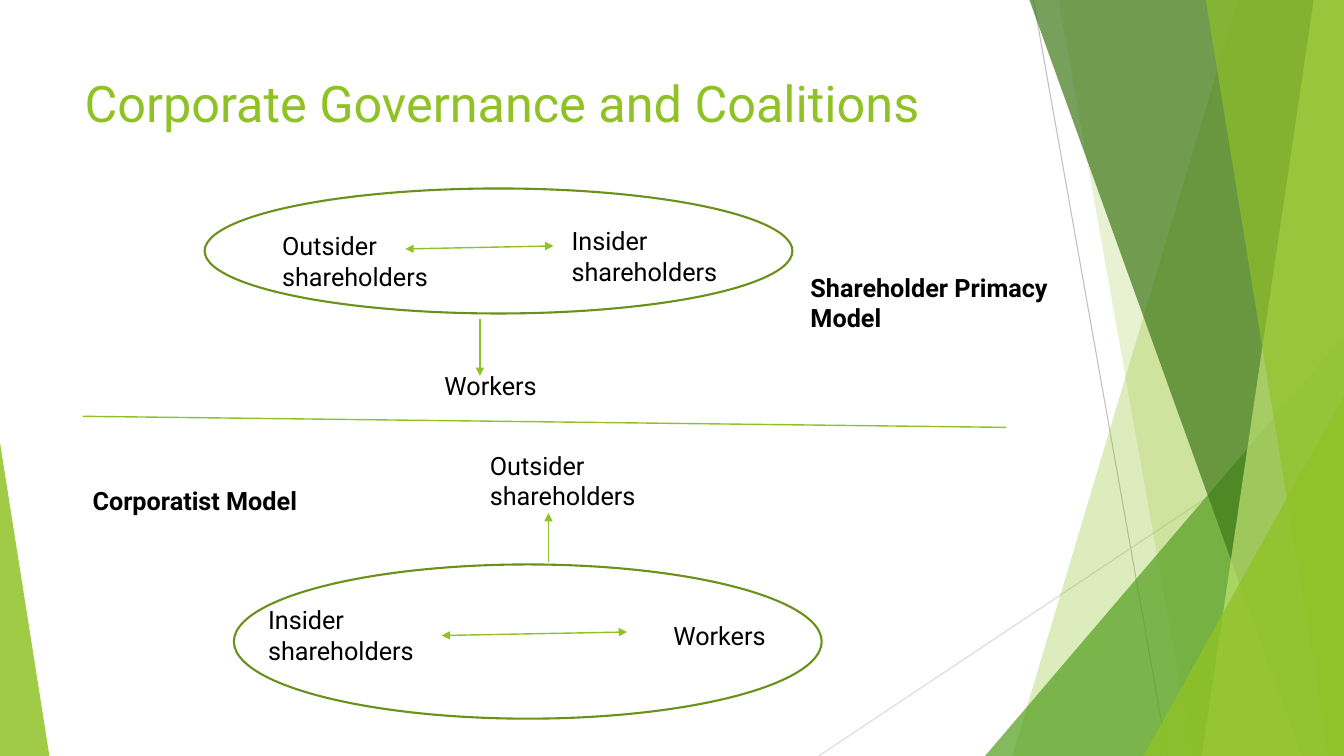
"""Build a slide comparing two corporate governance coalition models."""
from lxml import etree
from pptx import Presentation
from pptx.dml.color import RGBColor
from pptx.enum.shapes import MSO_CONNECTOR, MSO_SHAPE
from pptx.oxml.ns import qn
from pptx.util import Inches, Pt

STRAIGHT = MSO_CONNECTOR.STRAIGHT
TRIANGLE = MSO_SHAPE.ISOSCELES_TRIANGLE
OVAL = MSO_SHAPE.OVAL
GREEN = RGBColor(0x90, 0xC2, 0x26)
MID_GREEN = RGBColor(0x54, 0xA0, 0x21)
DARK_GREEN = RGBColor(0x3F, 0x78, 0x19)
LIGHT_GREEN = RGBColor(0xC0, 0xE4, 0x74)
OUTLINE_GREEN = RGBColor(0x6B, 0x90, 0x1C)
GRAY = RGBColor(0xBF, 0xBF, 0xBF)
LIGHT_GRAY = RGBColor(0xD9, 0xD9, 0xD9)
BLACK = RGBColor(0, 0, 0)
FONT = "Roboto"
W, H = 13.33, 7.5

prs = Presentation()
prs.slide_width, prs.slide_height = Inches(W), Inches(H)
s = prs.slides.add_slide(prs.slide_layouts[6])


def add_line(x1, y1, x2, y2, color=GREEN, width=1, arrows=()):
    """Draw a straight line with arrowheads at the named ends."""
    c = s.shapes.add_connector(STRAIGHT, Inches(x1), Inches(y1), Inches(x2), Inches(y2))
    c.line.color.rgb = color
    c.line.width = Pt(width)
    ln = c.line._get_or_add_ln()
    for end in arrows:
        etree.SubElement(ln, qn("a:" + end), type="triangle")
    etree.SubElement(c._element.spPr, qn("a:effectLst"))
    return c


def add_text(text, x, y, w, h, size=18, color=BLACK, bold=False):
    """Add a wrapped text box holding one paragraph."""
    box = s.shapes.add_textbox(Inches(x), Inches(y), Inches(w), Inches(h))
    tf = box.text_frame
    tf.word_wrap = True
    p = tf.paragraphs[0]
    p.text = text
    p.font.name, p.font.size = FONT, Pt(size)
    p.font.bold, p.font.color.rgb = bold, color
    return box


add_line(10.25, 0, 11.58, H, GRAY, 0.75)
add_line(W, 4.03, 8.12, H, LIGHT_GRAY, 0.75)

# kind, then top and bottom x of a band, or left, top, width and apex of a triangle
decorations = [
    ("band", (12.28, 10.04), GREEN, 30),
    ("band", (10.5, 11.83), GREEN, 20),
    ("triangle", (9.77, 3.33, 3.56, 1), MID_GREEN, 72),
    ("band", (10.21, 12.91), DARK_GREEN, 70),
    ("band", (13.03, 11.92), LIGHT_GREEN, 70),
    ("band", (11.96, 13.18), GREEN, 65),
    ("triangle", (11.34, 3.93, 1.99, 1), GREEN, 80),
    ("triangle", (0, 4.39, 0.49, 0), GREEN, 85),
]
for kind, geometry, color, opacity in decorations:
    if kind == "band":
        top_x, bottom_x = geometry
        fb = s.shapes.build_freeform(Inches(top_x), 0)
        corners = [(W, 0), (W, H), (bottom_x, H)]
        fb.add_line_segments([(Inches(x), Inches(y)) for x, y in corners])
        sp = fb.convert_to_shape()
    else:
        x, y, w, apex = geometry
        sp = s.shapes.add_shape(TRIANGLE, Inches(x), Inches(y), Inches(w), Inches(H - y))
        sp.adjustments[0] = apex
    sp.shadow.inherit = False
    sp.line.fill.background()
    sp.fill.solid()
    sp.fill.fore_color.rgb = color
    srgb = sp._element.spPr.find(qn("a:solidFill"))[0]
    etree.SubElement(srgb, qn("a:alpha"), val=str(opacity * 1000))

for x, y, w, h in [(2.03, 1.87, 5.83, 1.24), (2.32, 5.6, 5.83, 1.53)]:
    coalition = s.shapes.add_shape(OVAL, Inches(x), Inches(y), Inches(w), Inches(h))
    coalition.shadow.inherit = False
    coalition.fill.background()
    coalition.line.color.rgb = OUTLINE_GREEN
    coalition.line.width = Pt(1.5)

add_text("Corporate Governance and Coalitions", 0.74, 0.67, 9.4, 0.92, 36, GREEN)

add_text("Shareholder Primacy Model", 7.94, 2.65, 2.94, 0.71, bold=True)
add_text("Outsider shareholders", 2.7, 2.24, 1.82, 0.71)
add_text("Insider shareholders", 5.57, 2.19, 1.82, 0.71)
add_text("Workers", 4.31, 3.62, 1.26, 0.4)
add_line(4.02, 2.47, 5.49, 2.44, arrows=("headEnd", "tailEnd"))
add_line(4.76, 3.16, 4.76, 3.73, arrows=("tailEnd",))

add_line(0.82, 4.13, 9.98, 4.24)

add_text("Corporatist Model", 0.82, 4.77, 2.94, 0.4, bold=True)
add_text("Outsider shareholders", 4.76, 4.42, 1.82, 0.71)
insiders = add_text("Insider shareholders", 2.56, 5.95, 1.82, 0.71)
add_text("Workers", 6.58, 6.1, 1.22, 0.4)
alliance = add_line(4.38, 6.31, 6.22, 6.27, arrows=("headEnd", "tailEnd"))
alliance.begin_connect(insiders, 3)
add_line(5.44, 5.58, 5.44, 5.09, arrows=("tailEnd",))

prs.save("out.pptx")
